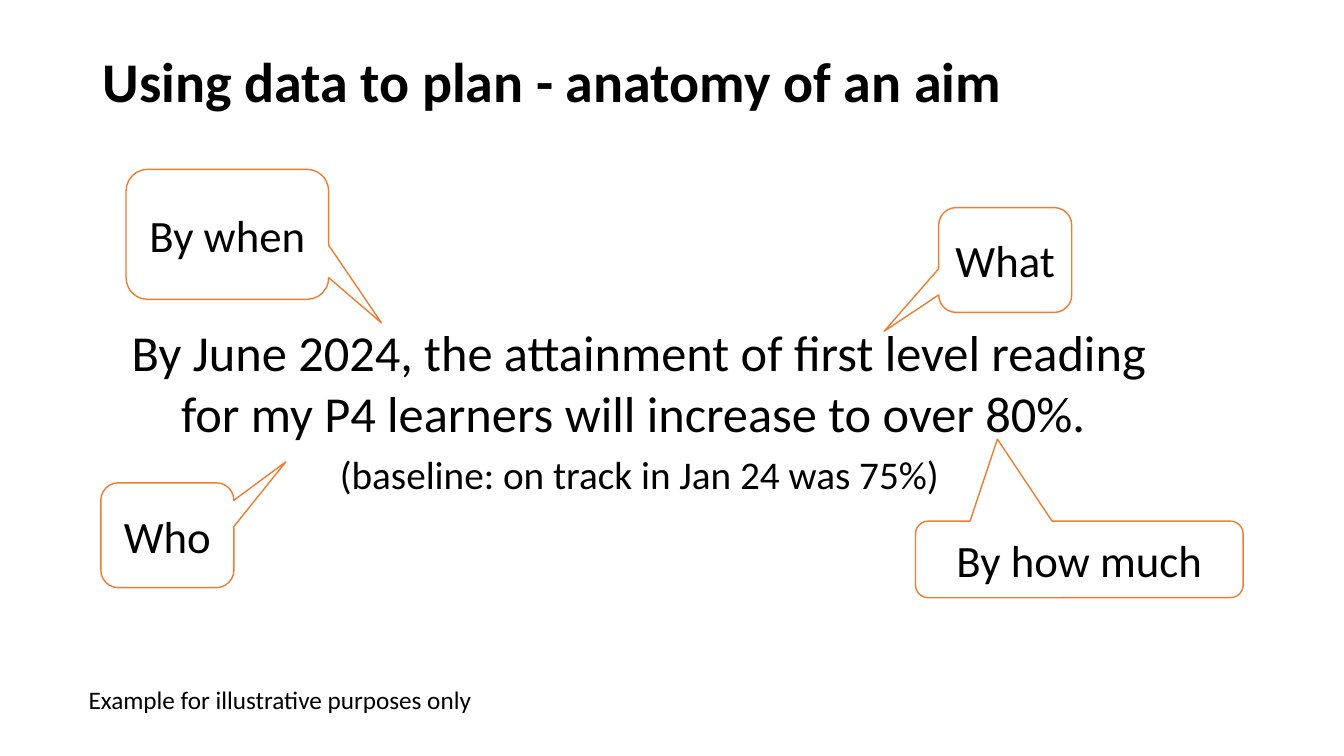
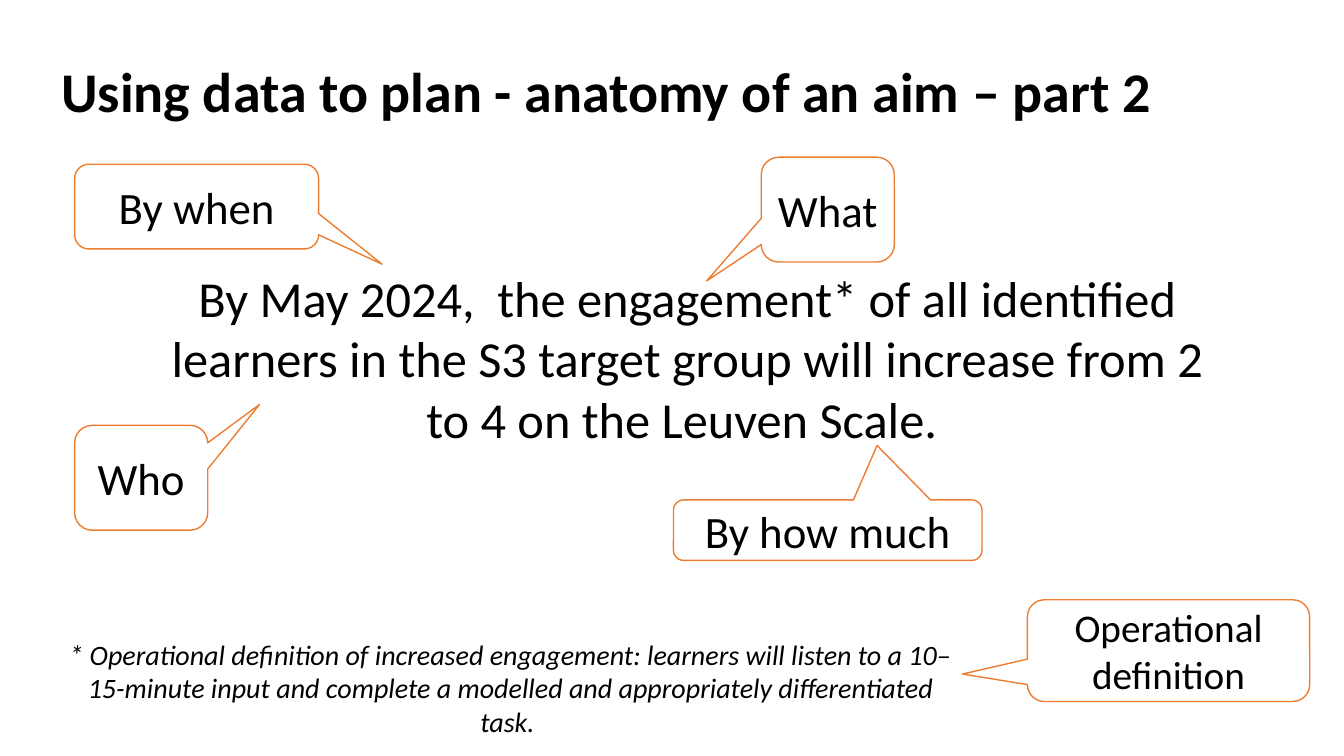
from dataclasses import dataclass

from pptx import Presentation
from pptx.dml.color import RGBColor
from pptx.enum.shapes import MSO_SHAPE as Shape
from pptx.enum.text import MSO_ANCHOR as Anchor, PP_ALIGN as Align
from pptx.slide import Slide
from pptx.text.text import TextFrame
from pptx.util import Inches, Pt

BLACK = RGBColor(0x00, 0x00, 0x00)
WHITE = RGBColor(0xFF, 0xFF, 0xFF)
ORANGE = RGBColor(0xED, 0x7D, 0x31)
FONT = "Calibri"
TITLE_SIZE = 40
AIM_SIZE = 36
BASELINE_SIZE = 28
CALLOUT_SIZE = 32
CORNER = 0.167


@dataclass(frozen=True)
class Box:
    left: float
    top: float
    width: float
    height: float

    def lengths(self) -> tuple[Inches, Inches, Inches, Inches]:
        return (Inches(self.left), Inches(self.top),
                Inches(self.width), Inches(self.height))


@dataclass(frozen=True)
class Line:
    """One paragraph of text with its look."""
    text: str
    size: float
    align: Align = Align.CENTER
    bold: bool = False
    italic: bool = False
    spacing: float = 1.0


@dataclass(frozen=True)
class Callout:
    """A speech bubble; the tip is measured from its centre in widths and heights."""
    text: str
    box: Box
    tip_x: float
    tip_y: float
    size: float = CALLOUT_SIZE


@dataclass(frozen=True)
class AimSlide:
    title: str
    title_box: Box
    aim: list[Line]
    aim_box: Box
    note: Line
    note_box: Box
    callouts: list[Callout]


def write_lines(frame: TextFrame, lines: list[Line]) -> None:
    frame.word_wrap = True
    for index, line in enumerate(lines):
        paragraph = frame.add_paragraph() if index else frame.paragraphs[0]
        paragraph.alignment = line.align
        paragraph.line_spacing = line.spacing
        if index:
            paragraph.space_before = Pt(line.size * 0.2)
        run = paragraph.add_run()
        run.text = line.text
        run.font.name = FONT
        run.font.size = Pt(line.size)
        run.font.bold = line.bold
        run.font.italic = line.italic
        run.font.color.rgb = BLACK


def add_text(slide: Slide, box: Box, lines: list[Line], anchor: Anchor = Anchor.TOP) -> None:
    frame = slide.shapes.add_textbox(*box.lengths()).text_frame
    frame.vertical_anchor = anchor
    write_lines(frame, lines)


def add_callout(slide: Slide, callout: Callout) -> None:
    shape = slide.shapes.add_shape(Shape.ROUNDED_RECTANGULAR_CALLOUT, *callout.box.lengths())
    for index, value in enumerate((callout.tip_x, callout.tip_y, CORNER)):
        shape.adjustments[index] = value
    shape.shadow.inherit = False
    shape.fill.solid()
    shape.fill.fore_color.rgb = WHITE
    shape.line.color.rgb = ORANGE
    shape.line.width = Pt(1)
    shape.text_frame.vertical_anchor = Anchor.MIDDLE
    write_lines(shape.text_frame, [Line(callout.text, callout.size)])


def by_when(box: Box) -> Callout:
    return Callout("By when", box, 0.76, 0.68)


def who(left: float, top: float) -> Callout:
    return Callout("Who", Box(left, top, 1.32, 1.04), 0.89, -0.7)


def what(left: float, top: float) -> Callout:
    return Callout("What", Box(left, top, 1.32, 1.04), -0.91, 0.68)


def by_how_much(box: Box, tip_x: float, tip_y: float) -> Callout:
    return Callout("By how much", box, tip_x, tip_y)


AIM_SLIDES = [
    AimSlide(
        title="Using data to plan - anatomy of an aim",
        title_box=Box(0.92, 0.11, 9.83, 1.45),
        aim=[
            Line("By June 2024, the attainment of first level reading "
                 "for my P4 learners will increase to over 80%. ", AIM_SIZE),
            Line("(baseline: on track in Jan 24 was 75%)", BASELINE_SIZE),
        ],
        aim_box=Box(0.92, 3.14, 10.84, 1.9),
        note=Line("Example for illustrative purposes only", 18, Align.LEFT),
        note_box=Box(0.78, 6.74, 4.2, 0.4),
        callouts=[
            by_when(Box(1.25, 1.68, 2.01, 1.29)),
            who(1, 4.79),
            what(9.31, 2.06),
            by_how_much(Box(9.08, 5.17, 3.25, 0.76), -0.25, -1.57),
        ],
    ),
    AimSlide(
        title="Using data to plan - anatomy of an aim – part 2",
        title_box=Box(0.51, 0.21, 11.5, 1.45),
        aim=[
            Line("By May 2024,  the engagement* of all identified learners in the S3 "
                 "target group will increase from 2 to 4 on the Leuven Scale. ", AIM_SIZE),
        ],
        aim_box=Box(1.4, 2.6, 10.84, 1.95),
        note=Line("* Operational definition of increased engagement: learners will listen "
                  "to a 10–15-minute input and complete a modelled and appropriately "
                  "differentiated task. ", 20, italic=True),
        note_box=Box(0.51, 6.27, 9.11, 1.11),
        callouts=[
            by_when(Box(0.74, 1.63, 2.42, 0.84)),
            who(0.74, 4.22),
            what(7.55, 1.56),
            by_how_much(Box(6.68, 4.96, 3.06, 0.6), 0.16, -1.4),
            Callout("Operational definition", Box(10.19, 5.95, 2.8, 1.01), -0.73, 0.23, 28),
        ],
    ),
]


def main() -> None:
    presentation = Presentation()
    presentation.slide_width = Inches(13.33)
    presentation.slide_height = Inches(7.5)
    blank_layout = presentation.slide_layouts[6]
    for content in AIM_SLIDES:
        slide = presentation.slides.add_slide(blank_layout)
        title = Line(content.title, TITLE_SIZE, Align.LEFT, bold=True, spacing=0.9)
        add_text(slide, content.title_box, [title], Anchor.MIDDLE)
        add_text(slide, content.aim_box, content.aim)
        add_text(slide, content.note_box, [content.note])
        for callout in content.callouts:
            add_callout(slide, callout)
    presentation.save("out.pptx")


if __name__ == "__main__":
    main()
